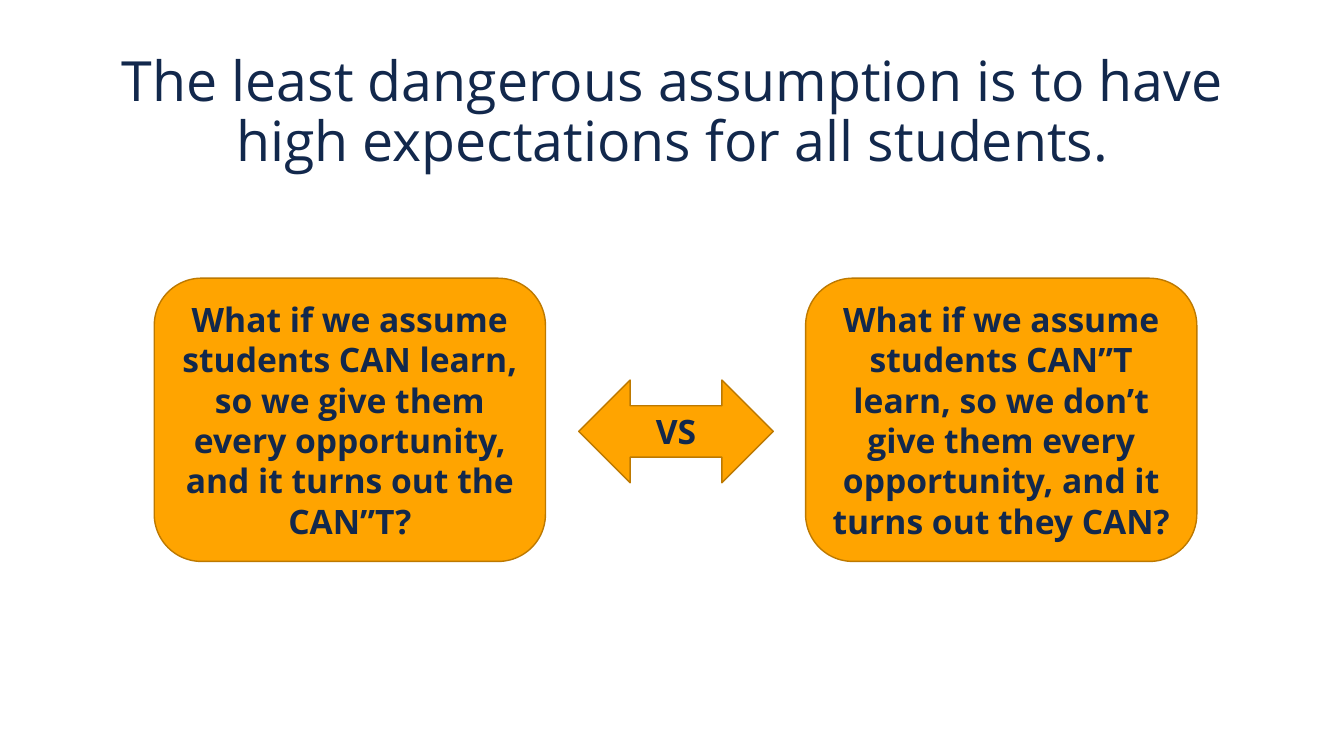
from pptx import Presentation
from pptx.dml.color import RGBColor
from pptx.enum.shapes import MSO_SHAPE as SHAPE
from pptx.enum.text import MSO_ANCHOR as ANCHOR, MSO_AUTO_SIZE as AUTO, PP_ALIGN as ALIGN
from pptx.util import Emu, Pt

PX = 9144  # EMU per px, 100 px to the inch


def px(n):
    return Emu(n * PX)


def rgb(value):
    return RGBColor.from_string(value)


class Deck:
    """Holds the style and the current slide."""
    font = "Open Sans"
    navy, orange, edge = "12284C", "FFA400", "BD7900"

    def __init__(self, width, height):
        self.prs = Presentation()
        self.prs.slide_width, self.prs.slide_height = px(width), px(height)
        self.s = None

    def add_slide(self):
        self.s = self.prs.slides.add_slide(self.prs.slide_layouts[5])

    def set_text(self, sp, text, size, bold=False):
        tf = sp.text_frame
        tf.text = text
        tf.word_wrap = True
        tf.auto_size = AUTO.NONE
        tf.vertical_anchor = ANCHOR.MIDDLE
        p = tf.paragraphs[0]
        p.alignment = ALIGN.CENTER
        f = p.runs[0].font
        f.name, f.size, f.bold = self.font, Pt(size), bold
        f.color.rgb = rgb(self.navy)
        return p

    def title(self, text, x, y, w, h):
        sp = self.s.shapes.title
        sp.left, sp.top, sp.width, sp.height = map(px, (x, y, w, h))
        p = self.set_text(sp, text, 39.6)
        p.line_spacing = 0.9

    def block(self, kind, text, x, y, w, h):
        sp = self.s.shapes.add_shape(kind, *map(px, (x, y, w, h)))
        sp.shadow.inherit = False
        sp.fill.solid()
        sp.fill.fore_color.rgb = rgb(self.orange)
        sp.line.color.rgb = rgb(self.edge)
        sp.line.width = Pt(1)
        self.set_text(sp, text, 24, bold=True)


def main():
    deck = Deck(1333, 750)
    deck.add_slide()

    # Title
    deck.title("The least dangerous assumption is to have high expectations "
               "for all students.", 92, 40, 1150, 145)

    # The two assumptions, side by side
    assumptions = [
        "What if we assume students CAN learn, so we give them every "
        "opportunity, and it turns out the CAN”T?",
        "What if we assume students CAN”T learn, so we don’t give them every "
        "opportunity, and it turns out they CAN?",
    ]
    for i, text in enumerate(assumptions):
        deck.block(SHAPE.ROUNDED_RECTANGLE, text, 153 + i * 646, 276, 388, 281)

    # Arrow between them
    deck.block(SHAPE.LEFT_RIGHT_ARROW, "VS", 574, 377, 193, 102)

    deck.prs.save("out.pptx")


if __name__ == "__main__":
    main()
